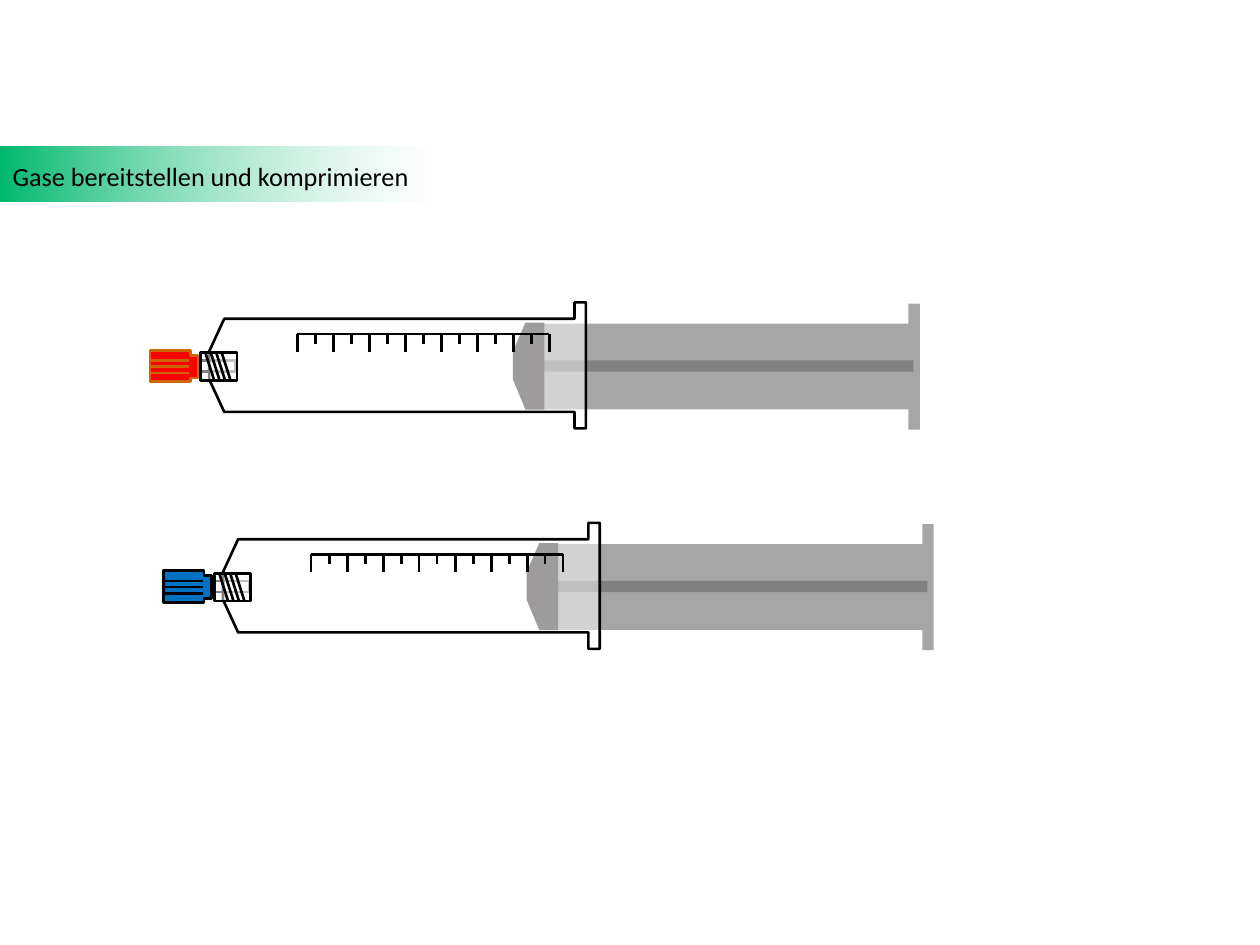
from dataclasses import dataclass

from lxml import etree
from pptx import Presentation
from pptx.dml.color import RGBColor
from pptx.enum.shapes import MSO_CONNECTOR, MSO_SHAPE
from pptx.enum.text import MSO_ANCHOR, MSO_AUTO_SIZE, PP_ALIGN
from pptx.oxml.ns import qn
from pptx.util import Inches, Pt

RECT = MSO_SHAPE.RECTANGLE
STRAIGHT = MSO_CONNECTOR.STRAIGHT
TITLE_ONLY = 5

COLORS = {
    "green": "00B86E",
    "white": "FFFFFF",
    "black": "000000",
    "plunger": "A6A6A6",
    "rib": "808080",
    "stopper": "3B3838",
    "red": "FF0000",
    "orange": "CC6600",
    "blue": "0070C0",
}

# Outlines of the first syringe, in inches on the slide
PLUNGER = [(7.3, 3.41), (7.21, 3.41), (7.21, 3.25), (4.31, 3.25),
           (4.31, 2.57), (7.21, 2.57), (7.21, 2.41), (7.3, 2.41)]
STOPPER = [(4.17, 3.25), (4.07, 3.01), (4.07, 2.79),
           (4.17, 2.56), (4.32, 2.56), (4.32, 3.25)]
BARREL = [(4.65, 3.4), (4.56, 3.4), (4.56, 3.27), (1.78, 3.27),
          (1.66, 3.01), (1.66, 2.79), (1.78, 2.53), (4.56, 2.53),
          (4.56, 2.4), (4.65, 2.4)]
CAP = [(1.51, 3.03), (1.19, 3.03), (1.19, 2.78), (1.51, 2.78),
       (1.51, 2.82), (1.57, 2.82), (1.57, 3.0), (1.51, 3.0)]

SCALE_LEFT, SCALE_RIGHT, SCALE_TOP = 2.36, 4.36, 2.65
SCALE_STEPS = 14


@dataclass
class Syringe:
    dx: float
    dy: float
    cap_fill: str
    cap_line: str


SYRINGES = [
    Syringe(0, 0, "red", "orange"),
    Syringe(0.11, 1.75, "blue", "black"),
]


def rgb(name: str) -> RGBColor:
    return RGBColor.from_string(COLORS[name])


def set_alpha(fill_parent, percent: int) -> None:
    """Make the first colour below the given element partly transparent."""
    color = next(fill_parent.iter(qn("a:srgbClr")))
    etree.SubElement(color, qn("a:alpha")).set("val", str(percent * 1000))


def paint(sp, fill: str | None, line: str | None, alpha: int = 100) -> None:
    sp.shadow.inherit = False
    if fill:
        sp.fill.solid()
        sp.fill.fore_color.rgb = rgb(fill)
        if alpha < 100:
            set_alpha(sp.element.spPr.find(qn("a:solidFill")), alpha)
    else:
        sp.fill.background()
    if line:
        sp.line.color.rgb = rgb(line)
        sp.line.width = Pt(1.5)
    else:
        sp.line.fill.background()


@dataclass
class Pen:
    """Draws into a group, shifted by the offset of its syringe."""
    shapes: object
    dx: float
    dy: float

    def at(self, x: float, y: float) -> tuple[int, int]:
        return Inches(x + self.dx), Inches(y + self.dy)

    def outline(self, points: list, fill: str, line: str | None = None,
                alpha: int = 100) -> None:
        start, *rest = [self.at(*point) for point in points]
        builder = self.shapes.build_freeform(*start)
        builder.add_line_segments(rest, close=True)
        paint(builder.convert_to_shape(), fill, line, alpha)

    def rect(self, x: float, y: float, w: float, h: float, fill: str | None,
             line: str | None = None, alpha: int = 100) -> None:
        sp = self.shapes.add_shape(RECT, *self.at(x, y), Inches(w), Inches(h))
        paint(sp, fill, line, alpha)

    def line(self, x1: float, y1: float, x2: float, y2: float,
             color: str = "black") -> None:
        cxn = self.shapes.add_connector(
            STRAIGHT, *self.at(x1, y1), *self.at(x2, y2))
        cxn.line.color.rgb = rgb(color)
        cxn.line.width = Pt(1.5)
        etree.SubElement(cxn.element.spPr, qn("a:effectLst"))


def draw_syringe(s, syringe: Syringe) -> None:
    group = s.shapes.add_group_shape()
    pen = Pen(group.shapes, syringe.dx, syringe.dy)

    pen.outline(PLUNGER, "plunger")
    pen.rect(4.17, 2.86, 3.08, 0.09, "rib")
    pen.outline(STOPPER, "stopper")
    pen.rect(1.53, 2.86, 0.34, 0.09, None, "black")
    pen.outline(BARREL, "white", "black", alpha=50)

    pen.rect(1.59, 2.8, 0.29, 0.22, "white", "black", alpha=50)
    for i in range(4):
        x = 1.63 + i * 0.13 / 3
        pen.line(x + 0.07, 3.02, x, 2.8)

    pen.line(SCALE_RIGHT, SCALE_TOP, SCALE_LEFT, SCALE_TOP)
    for i in range(SCALE_STEPS + 1):
        x = SCALE_LEFT + i * (SCALE_RIGHT - SCALE_LEFT) / SCALE_STEPS
        length = 0.08 if i % 2 else 0.14
        pen.line(x, SCALE_TOP + length, x, SCALE_TOP)

    pen.outline(CAP, syringe.cap_fill, syringe.cap_line)
    for y in (2.96, 2.91, 2.86):
        pen.line(1.18, y, 1.5, y, syringe.cap_line)


def draw_title(s) -> None:
    title = s.shapes.title
    title.left, title.top = Inches(0), Inches(1.22)
    title.width, title.height = Inches(3.38), Inches(0.35)
    tf = title.text_frame
    tf.text = "Gase bereitstellen und komprimieren"
    tf.word_wrap = False
    tf.auto_size = MSO_AUTO_SIZE.SHAPE_TO_FIT_TEXT
    tf.vertical_anchor = MSO_ANCHOR.TOP
    p = tf.paragraphs[0]
    p.alignment = PP_ALIGN.LEFT
    font = p.runs[0].font
    font.name, font.size = "Calibri", Pt(15)
    font.color.rgb = rgb("black")

    band = s.shapes.add_shape(
        RECT, Inches(0), Inches(1.16), Inches(3.44), Inches(0.44))
    band.shadow.inherit = False
    band.line.fill.background()
    band.fill.gradient()
    band.fill.gradient_angle = 180
    for stop, color in zip(band.fill.gradient_stops, ("white", "green")):
        stop.color.rgb = rgb(color)
    set_alpha(band.element.spPr.find(qn("a:gradFill")), 42)
    title.element.addprevious(band.element)


def main() -> None:
    prs = Presentation()
    prs.slide_width, prs.slide_height = Inches(10), Inches(7.5)
    s = prs.slides.add_slide(prs.slide_layouts[TITLE_ONLY])
    draw_title(s)
    for syringe in SYRINGES:
        draw_syringe(s, syringe)
    prs.save("out.pptx")


if __name__ == "__main__":
    main()
